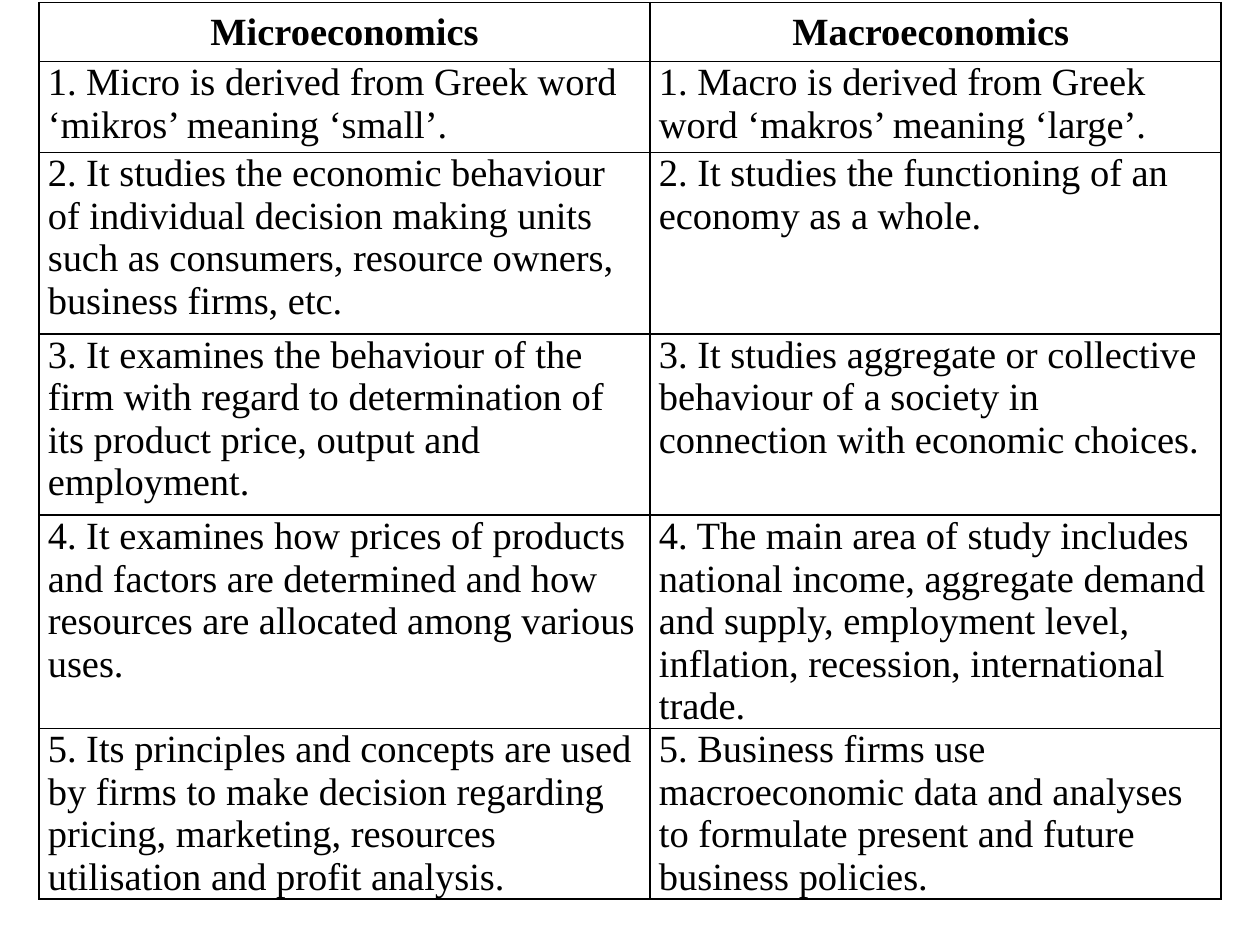
from lxml import etree
from pptx import Presentation
from pptx.dml.color import RGBColor
from pptx.enum.text import MSO_ANCHOR, PP_ALIGN
from pptx.oxml.ns import qn
from pptx.util import Inches, Pt

LEFT, CENTER = PP_ALIGN.LEFT, PP_ALIGN.CENTER
TOP, MIDDLE = MSO_ANCHOR.TOP, MSO_ANCHOR.MIDDLE
BLACK = RGBColor(0, 0, 0)
FONT = "Times New Roman"

WIDTHS = [4.85, 4.53]
HEIGHTS = [0.47, 0.72, 1.44, 1.44, 1.38, 1.31]
ROWS = [
    ("Microeconomics", "Macroeconomics "),
    ("1. Micro is derived from Greek word ‘mikros’ meaning ‘small’.",
     "1. Macro is derived from Greek word ‘makros’ meaning ‘large’."),
    ("2. It studies the economic behaviour of individual decision making "
     "units such as consumers, resource owners,\nbusiness firms, etc.",
     "2. It studies the functioning of an economy as a whole."),
    ("3. It examines the behaviour of the firm with regard to determination "
     "of its product price, output and employment.",
     "3. It studies aggregate or collective behaviour of a society in "
     "connection with economic choices."),
    ("4. It examines how prices of products and factors are determined and "
     "how resources are allocated among various uses.",
     "4. The main area of study includes national income, aggregate demand "
     "and supply, employment level, inflation, recession, international trade."),
    ("5. Its principles and concepts are used by firms to make decision "
     "regarding pricing, marketing, resources utilisation and profit analysis.",
     "5. Business firms use macroeconomic data and analyses to formulate "
     "present and future business policies."),
]


def write(cell, text, bold=False, align=LEFT, anchor=TOP):
    cell.margin_left = cell.margin_right = Inches(0.07)
    cell.margin_top = cell.margin_bottom = 0
    cell.vertical_anchor = anchor
    cell.text_frame.text = text
    for para in cell.text_frame.paragraphs:
        para.alignment = align
        font = para.runs[0].font
        font.name, font.size, font.bold = FONT, Pt(22), bold
        font.color.rgb = BLACK


def frame(cell):
    props = cell._tc.get_or_add_tcPr()
    for spot, side in enumerate(("a:lnL", "a:lnR", "a:lnT", "a:lnB")):
        line = etree.Element(qn(side), w=str(Pt(1)))
        fill = etree.SubElement(line, qn("a:solidFill"))
        etree.SubElement(fill, qn("a:srgbClr"), val=str(BLACK))
        props.insert(spot, line)


prs = Presentation()
prs.slide_width, prs.slide_height = Inches(10), Inches(7.5)
slide = prs.slides.add_slide(prs.slide_layouts[6])

# Comparison table
table = slide.shapes.add_table(
    len(ROWS), len(WIDTHS), Inches(0.31), Inches(0.02),
    Inches(sum(WIDTHS)), Inches(sum(HEIGHTS))).table
table.first_row = table.horz_banding = False
for col, width in zip(table.columns, WIDTHS):
    col.width = Inches(width)
for row, height in zip(table.rows, HEIGHTS):
    row.height = Inches(height)

# Header row, then the numbered points
for r, texts in enumerate(ROWS):
    look = {"bold": True, "align": CENTER, "anchor": MIDDLE} if r == 0 else {}
    for c, text in enumerate(texts):
        cell = table.cell(r, c)
        write(cell, text, **look)
        cell.fill.background()
        frame(cell)

prs.save("out.pptx")
